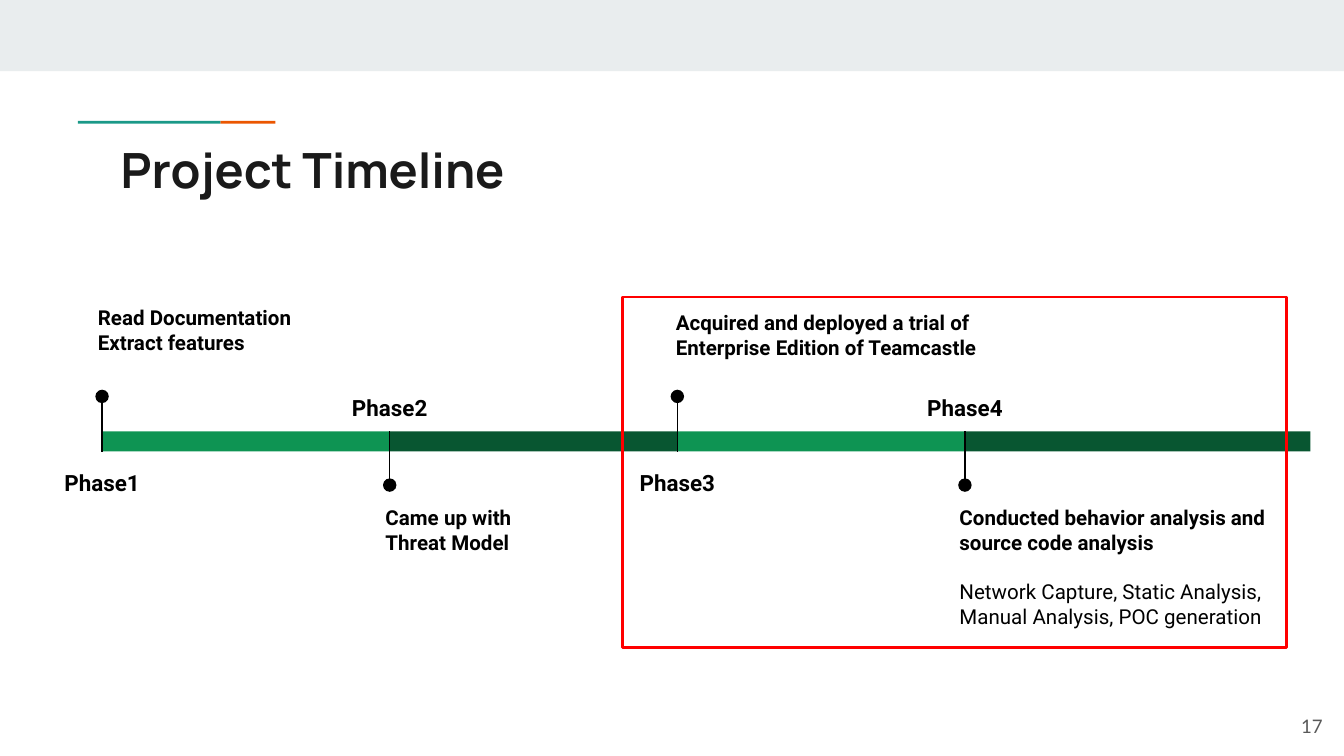
from dataclasses import dataclass

from lxml.etree import SubElement
from pptx import Presentation
from pptx.dml.color import RGBColor
from pptx.enum.shapes import MSO_CONNECTOR, MSO_SHAPE
from pptx.enum.text import MSO_ANCHOR, PP_ALIGN
from pptx.oxml.ns import qn
from pptx.util import Inches, Pt

BLACK = "000000"
START, STEP = 0.76, 2.14
BAR_TOP, BAR_HIGH = 3.21, 0.15
DOT = 0.1


@dataclass
class Phase:
    bar: str
    up: bool
    left: float
    top: float
    note: list[str]
    wide: float = STEP
    room: float = 2.46
    more: str = ""


PHASES = [
    Phase("0E9453", True, 0.63, 2.17, ["Read Documentation", "Extract features"]),
    Phase("085631", False, 2.77, 3.66, ["Came up with", "Threat Model"]),
    Phase("0E9453", True, 4.93, 2.21,
          ["Acquired and deployed a trial of Enterprise Edition of Teamcastle"]),
    Phase("085631", False, 7.04, 3.66,
          ["Conducted behavior analysis and source code analysis"],
          wide=2.57, room=2.71,
          more="Network Capture, Static Analysis, Manual Analysis, POC generation"),
]

BODY = {"name": "Roboto", "size": Pt(11), "bold": True}
LABEL = BODY | {"size": Pt(12)}
TITLE = {"name": "Manrope", "size": Pt(26), "bold": True}
NUMBER = {"name": "Lato", "size": Pt(10)}


def color(code: str) -> RGBColor:
    return RGBColor.from_string(code)


def add_block(slide, kind, left: float, top: float, wide: float, high: float,
              fill: str = "", line: str = ""):
    shape = slide.shapes.add_shape(
        kind, Inches(left), Inches(top), Inches(wide), Inches(high))
    shape.shadow.inherit = False
    if fill:
        shape.fill.solid()
        shape.fill.fore_color.rgb = color(fill)
    else:
        shape.fill.background()
    if line:
        shape.line.color.rgb = color(line)
        shape.line.width = Pt(1.5)
    else:
        shape.line.fill.background()
    return shape


def add_stem(slide, x: float, top: float, end: float) -> None:
    stem = slide.shapes.add_connector(
        MSO_CONNECTOR.STRAIGHT, Inches(x), Inches(top), Inches(x), Inches(end))
    stem.line.color.rgb = color(BLACK)
    stem.line.width = Pt(0.75)
    SubElement(stem._element.spPr, qn("a:effectLst"))


def add_text(slide, left: float, top: float, wide: float, high: float,
             lines: list[str], font: dict, ink: str = BLACK,
             align=PP_ALIGN.LEFT, anchor=MSO_ANCHOR.TOP):
    """Add a text box with one paragraph per line and return its frame."""
    frame = slide.shapes.add_textbox(
        Inches(left), Inches(top), Inches(wide), Inches(high)).text_frame
    frame.word_wrap = True
    frame.vertical_anchor = anchor
    for side in ("left", "top", "right", "bottom"):
        setattr(frame, f"margin_{side}", Inches(0.1))
    frame.text = "\n".join(lines)
    for para in frame.paragraphs:
        para.alignment = align
        for run in para.runs:
            for key, value in font.items():
                setattr(run.font, key, value)
            run.font.color.rgb = color(ink)
    return frame


def add_phase(slide, index: int, phase: Phase) -> None:
    x = START + STEP * index
    add_block(slide, MSO_SHAPE.RECTANGLE, x, BAR_TOP, phase.wide, BAR_HIGH, phase.bar)
    if phase.up:
        stem, dot, label = (2.96, BAR_TOP + BAR_HIGH), 2.9, 3.36
    else:
        stem, dot, label = (BAR_TOP, 3.6), 3.56, 2.8
    add_stem(slide, x, *stem)
    add_block(slide, MSO_SHAPE.OVAL, x - DOT / 2, dot, DOT, DOT, BLACK)

    name = add_text(slide, x - 0.42, label, 0.84, 0.41, [f"Phase{index + 1}"],
                    LABEL, align=PP_ALIGN.CENTER).paragraphs[0]
    name.line_spacing = 1.15
    name.space_after = Pt(16)

    lines = phase.note + ([phase.more] if phase.more else [])
    note = add_text(slide, phase.left, phase.top, phase.room, 1.03, lines, BODY)
    if phase.more:
        last = note.paragraphs[-1]
        last.space_before = Pt(13)
        last.runs[0].font.bold = False


def main() -> None:
    deck = Presentation()
    deck.slide_width = Inches(10)
    deck.slide_height = deck.slide_width * 9 // 16
    slide = deck.slides.add_slide(deck.slide_layouts[6])

    add_block(slide, MSO_SHAPE.RECTANGLE, 0, 0, 10, 0.53, "E9EDEE")
    add_block(slide, MSO_SHAPE.RECTANGLE, 1.64, 0.9, 0.41, 0.02, "EB5600")
    add_block(slide, MSO_SHAPE.RECTANGLE, 0.58, 0.9, 1.06, 0.02, "1A9988")
    add_text(slide, 0.8, 0.94, 8.41, 0.59, ["Project Timeline"], TITLE, "1A1A1A")
    add_text(slide, 9.34, 5.19, 0.6, 0.43, ["17"], NUMBER, "595959",
             PP_ALIGN.RIGHT, MSO_ANCHOR.MIDDLE)

    for index, phase in enumerate(PHASES):
        add_phase(slide, index, phase)
    add_block(slide, MSO_SHAPE.RECTANGLE, 4.63, 2.21, 4.94, 2.61, line="FF0000")

    deck.save("out.pptx")


if __name__ == "__main__":
    main()
